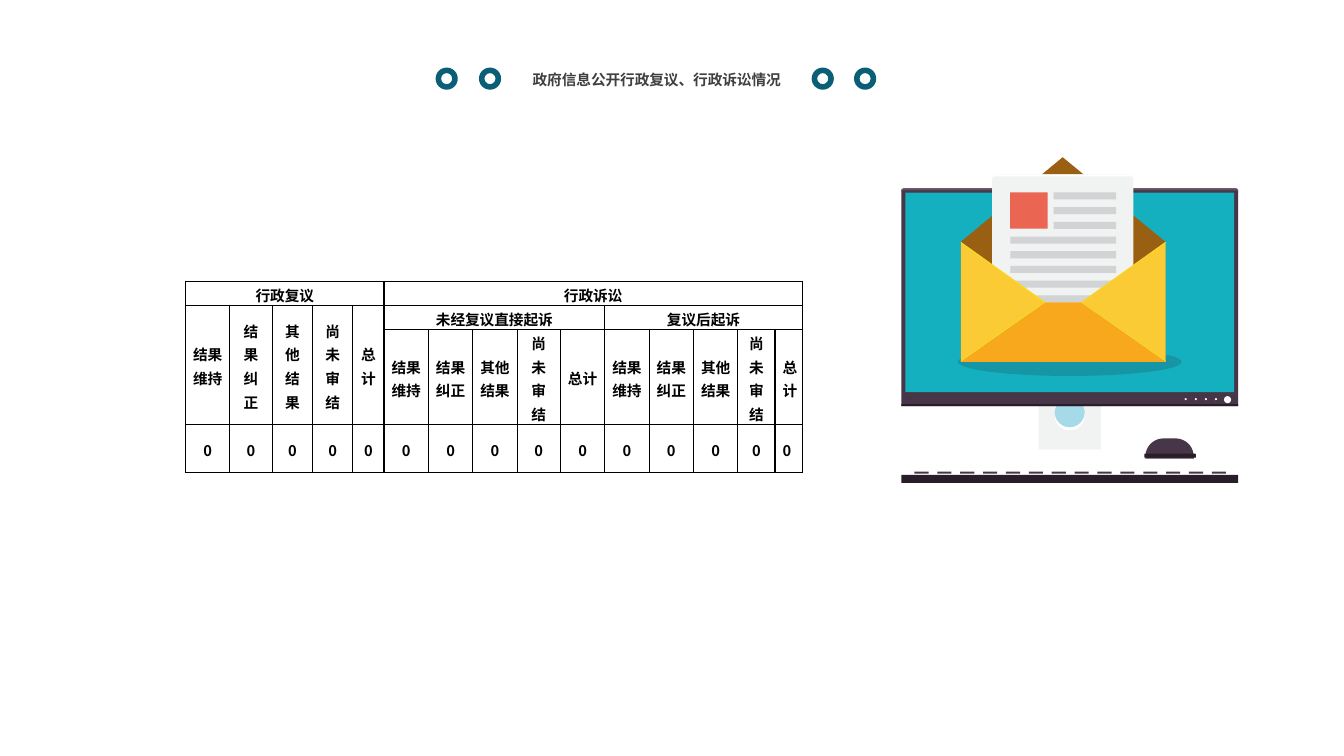
import math

from lxml import etree
from pptx import Presentation
from pptx.dml.color import RGBColor
from pptx.enum import shapes, text
from pptx.oxml import ns
from pptx.util import Inches, Pt

TEAL = RGBColor(0x0A, 0x5E, 0x75)
TITLE_GRAY = RGBColor(0x40, 0x40, 0x40)
BLACK = RGBColor(0, 0, 0)
WHITE = RGBColor(0xFF, 0xFF, 0xFF)
PAPER = RGBColor(0xF1, 0xF2, 0xF2)
PALE_BLUE = RGBColor(0xA6, 0xDA, 0xE9)
PLUM = RGBColor(0x46, 0x36, 0x47)
DARK_PLUM = RGBColor(0x28, 0x1D, 0x28)
LIGHT_PLUM = RGBColor(0x5F, 0x51, 0x60)
SCREEN = RGBColor(0x15, 0xB0, 0xBF)
SHADE = RGBColor(0x16, 0x95, 0xA4)
BROWN = RGBColor(0x99, 0x5F, 0x13)
LINE_GRAY = RGBColor(0xD1, 0xD3, 0xD4)
CORAL = RGBColor(0xEA, 0x65, 0x52)
YELLOW = RGBColor(0xFA, 0xCB, 0x34)
BRIGHT_YELLOW = RGBColor(0xF8, 0xDB, 0x1D)
ORANGE = RGBColor(0xF8, 0xA8, 0x1D)

RECT = shapes.MSO_SHAPE.RECTANGLE
OVAL = shapes.MSO_SHAPE.OVAL
DONUT = shapes.MSO_SHAPE.DONUT
CENTER = text.PP_ALIGN.CENTER
CJK = "Noto Sans CJK SC"
SERIF = "Times New Roman"

COLUMN_WIDTHS = [0.44, 0.42, 0.4, 0.4, 0.31, 0.44, 0.44, 0.44, 0.43,
                 0.44, 0.44, 0.44, 0.44, 0.37, 0.27]
ROW_HEIGHTS = [0.24, 0.24, 0.94, 0.47]
REVIEW_OUTCOMES = ["结果维持", "结果\n纠正", "其他\v结果", "尚未\v审结", "总计"]
LAWSUIT_OUTCOMES = ["结果\v维持", "结果\v纠正", "其他\v结果", "尚未\v审结", "总计"]


def paint(shape, color):
    shape.shadow.inherit = False
    shape.fill.solid()
    shape.fill.fore_color.rgb = color
    shape.line.fill.background()


def add_preset(group, kind, color, *box):
    paint(group.shapes.add_shape(kind, *map(Inches, box)), color)


def add_outline(group, color, points):
    start, *rest = [(Inches(x), Inches(y)) for x, y in points]
    builder = group.shapes.build_freeform(*start, scale=1.0)
    builder.add_line_segments(rest, close=True)
    paint(builder.convert_to_shape(), color)


def arc(x, y, radius, start, end, steps=12):
    """Points on a circle, in degrees clockwise from the right."""
    angles = [math.radians(start + (end - start) * i / steps) for i in range(steps + 1)]
    return [(x + radius * math.cos(a), y + radius * math.sin(a)) for a in angles]


def rounded_edge(left, top, width, radius):
    """Left-to-right top edge with two rounded corners."""
    return (arc(left + radius, top + radius, radius, 180, 270)
            + arc(left + width - radius, top + radius, radius, 270, 360))


def add_rounded_top(group, color, left, top, width, height, radius):
    bottom = top + height
    corners = [(left + width, bottom), (left, bottom)]
    add_outline(group, color, rounded_edge(left, top, width, radius) + corners)


def add_rim(group, color, left, top, width, radius):
    """Thin highlight that follows a rounded top edge."""
    lower = rounded_edge(left, top + 0.02, width, radius)
    add_outline(group, color, rounded_edge(left, top, width, radius) + lower[::-1])


def set_font(font, **values):
    color = values.pop("color")
    for name, value in values.items():
        setattr(font, name, value)
    font.color.rgb = color


def set_east_asian(run):
    etree.SubElement(run.font._element, ns.qn("a:ea"), typeface=CJK)


def add_title(slide):
    box = slide.shapes.add_textbox(Inches(5.09), Inches(0.63), Inches(2.85), Inches(0.3))
    box.text_frame.word_wrap = True
    paragraph = box.text_frame.paragraphs[0]
    paragraph.alignment = CENTER
    paragraph.line_spacing = 1.14
    run = paragraph.add_run()
    run.text = "政府信息公开行政复议、行政诉讼情况"
    set_font(run.font, size=Pt(10.5), bold=True, name=CJK, color=TITLE_GRAY)
    set_east_asian(run)

    rings = slide.shapes.add_group_shape()
    for left in (4.32, 4.75, 8.05, 8.47):
        add_preset(rings, DONUT, TEAL, left, 0.67, 0.22, 0.22)


def add_borders(cell):
    properties = cell._tc.get_or_add_tcPr()
    for index, side in enumerate(("lnL", "lnR", "lnT", "lnB")):
        line = etree.Element(ns.qn(f"a:{side}"), w=str(Pt(1)))
        fill = etree.SubElement(line, ns.qn("a:solidFill"))
        etree.SubElement(fill, ns.qn("a:srgbClr"), val=str(BLACK))
        properties.insert(index, line)


def fill_cell(cell, label, font_name, alignment=CENTER):
    cell.text = label
    cell.vertical_anchor = text.MSO_ANCHOR.MIDDLE
    for paragraph in cell.text_frame.paragraphs:
        paragraph.alignment = alignment
        paragraph.line_spacing = Pt(17)
        for run in paragraph.runs:
            set_font(run.font, size=Pt(10.5), bold=True, name=font_name, color=BLACK)
            set_east_asian(run)


def add_case_table(slide):
    frame = slide.shapes.add_table(
        len(ROW_HEIGHTS), len(COLUMN_WIDTHS), Inches(1.84), Inches(2.79),
        Inches(sum(COLUMN_WIDTHS)), Inches(sum(ROW_HEIGHTS)))
    table = frame.table
    table.first_row = table.horz_banding = False
    for column, width in zip(table.columns, COLUMN_WIDTHS):
        column.width = Inches(width)
    for row, height in zip(table.rows, ROW_HEIGHTS):
        row.height = Inches(height)
    for cell in table.iter_cells():
        cell.margin_left = cell.margin_right = Pt(5.4)
        cell.margin_top = cell.margin_bottom = 0
        cell.fill.background()
        add_borders(cell)

    headings = [(0, 0, 4, "行政复议"), (0, 5, 14, "行政诉讼"),
                (1, 5, 9, "未经复议直接起诉"), (1, 10, 14, "复议后起诉")]
    for row, first, last, label in headings:
        table.cell(row, first).merge(table.cell(row, last))
        fill_cell(table.cell(row, first), label, SERIF)
    for column, label in enumerate(REVIEW_OUTCOMES):
        table.cell(1, column).merge(table.cell(2, column))
        fill_cell(table.cell(1, column), label, SERIF)
    for column, label in enumerate(LAWSUIT_OUTCOMES * 2, start=5):
        fill_cell(table.cell(2, column), label, SERIF)
    last_column = len(COLUMN_WIDTHS) - 1
    for column in range(len(COLUMN_WIDTHS)):
        alignment = text.PP_ALIGN.JUSTIFY if column == last_column else CENTER
        fill_cell(table.cell(3, column), "0", CJK, alignment)


def add_computer(group):
    add_preset(group, RECT, PAPER, 10.3, 3.95, 0.62, 0.51)
    add_preset(group, OVAL, PALE_BLUE, 10.46, 3.95, 0.3, 0.3)
    add_outline(group, WHITE, arc(10.61, 4.12, 0.15, 0, 180) + arc(10.61, 4.09, 0.15, 180, 0))
    add_rounded_top(group, PLUM, 8.94, 1.87, 3.34, 2.16, 0.03)
    add_preset(group, RECT, DARK_PLUM, 8.94, 4.01, 3.34, 0.02)
    add_rim(group, LIGHT_PLUM, 8.94, 1.87, 3.34, 0.02)
    add_rounded_top(group, WHITE, 10, 4.46, 1.21, 0.08, 0.06)
    add_preset(group, RECT, SCREEN, 8.98, 1.91, 3.26, 1.98)
    add_preset(group, OVAL, WHITE, 12.14, 3.93, 0.07, 0.07)
    for light in range(4):
        add_preset(group, OVAL, WHITE, 11.75 + 0.1 * light, 3.95, 0.02, 0.02)
    add_preset(group, RECT, DARK_PLUM, 8.94, 4.71, 3.34, 0.08)
    add_rounded_top(group, PLUM, 11.36, 4.35, 0.48, 0.2, 0.18)
    for key in range(14):
        add_preset(group, RECT, PLUM, 9.07 + 2.95 / 13 * key, 4.68, 0.14, 0.02)


def add_letter(group):
    add_preset(group, OVAL, SHADE, 9.5, 3.45, 2.22, 0.28)
    add_outline(group, BROWN, [(9.53, 2.4), (10.54, 1.56), (11.56, 2.4), (11.56, 3.59), (9.53, 3.59)])
    add_rounded_top(group, PAPER, 9.84, 1.73, 1.4, 1.38, 0.02)
    add_rim(group, WHITE, 9.84, 1.73, 1.4, 0.02)
    add_preset(group, RECT, CORAL, 10.02, 1.91, 0.37, 0.36)
    for line in range(8):
        left, width = (10.45, 0.62) if line < 3 else (10.02, 1.05)
        add_preset(group, RECT, LINE_GRAY, left, 1.91 + 1.02 / 7 * line, width, 0.07)
    for side, tip, inner in ((9.53, 10.37, 10.35), (11.56, 10.72, 10.73)):
        add_outline(group, YELLOW, [(side, 2.4), (tip, 3), (side, 3.59)])
        add_outline(group, BRIGHT_YELLOW, [(side, 2.4), (side, 2.41), (inner, 3),
                                           (side, 3.58), (side, 3.59), (tip, 3)])
    add_outline(group, ORANGE, [(10.72, 3), (10.37, 3), (9.53, 3.59), (11.56, 3.59)])


def main():
    deck = Presentation()
    deck.slide_width, deck.slide_height = Inches(13.33), Inches(7.5)
    slide = deck.slides.add_slide(deck.slide_layouts[6])
    add_title(slide)
    illustration = slide.shapes.add_group_shape()
    add_computer(illustration)
    add_letter(illustration)
    add_rounded_top(illustration, DARK_PLUM, 11.35, 4.5, 0.51, 0.04, 0.01)
    add_case_table(slide)
    deck.save("out.pptx")


if __name__ == "__main__":
    main()
